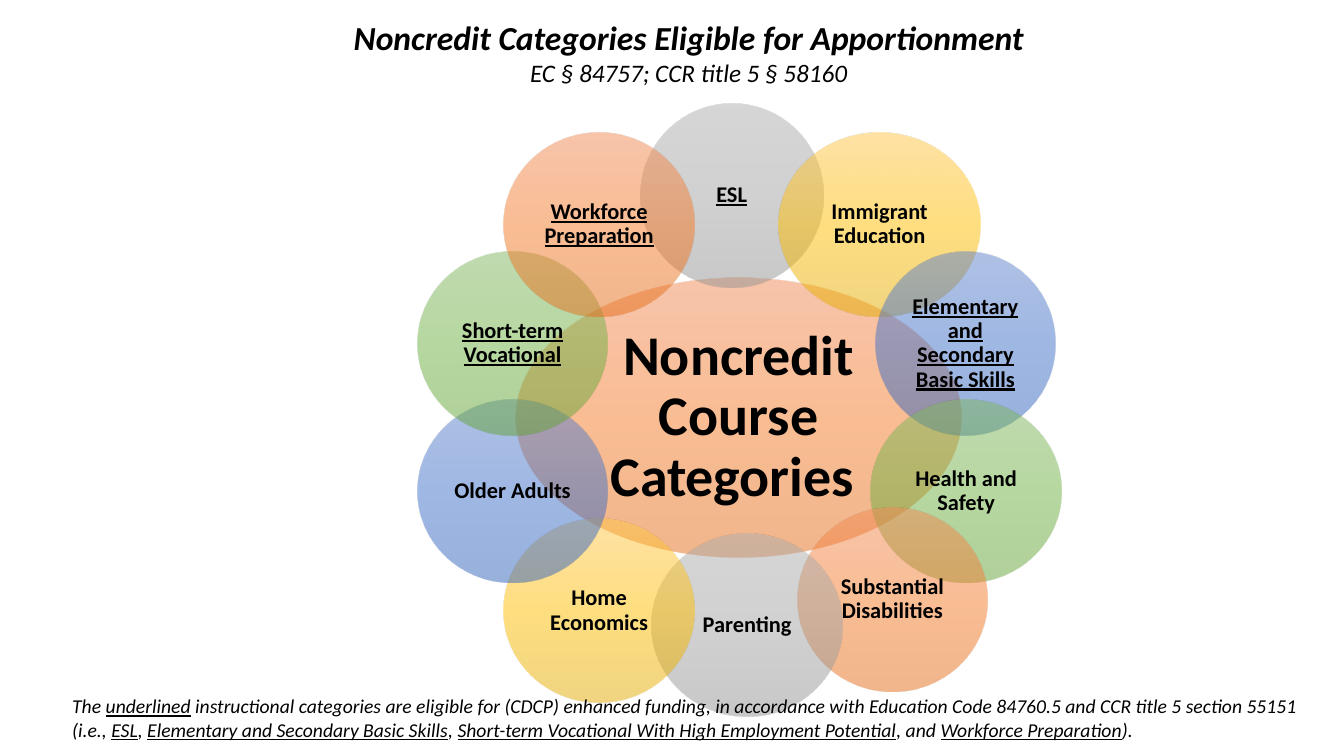
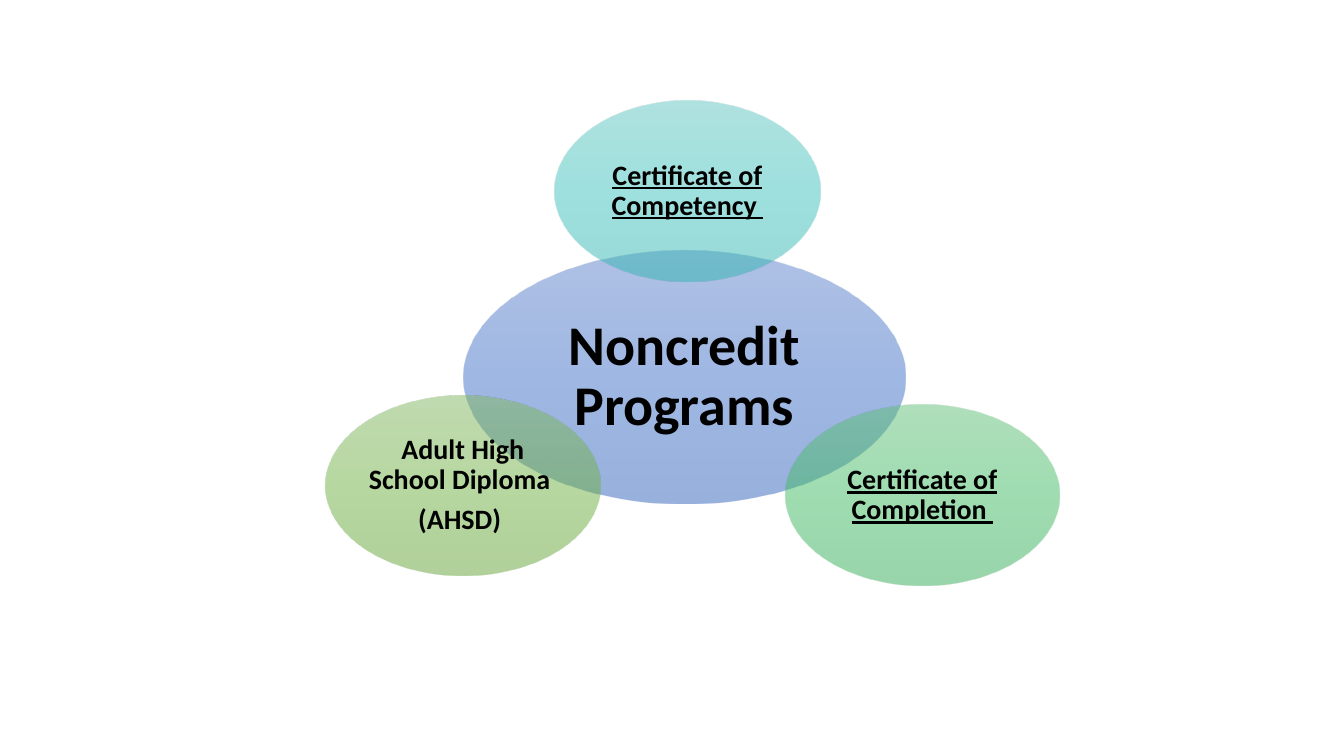
from lxml import etree
from pptx import Presentation
from pptx import util as u
from pptx.dml.color import RGBColor
from pptx.enum import shapes, text
from pptx.oxml.ns import qn

COLOURS = {
    "ink": "000000",
    "orange": ("F18C57", "F67B28", "E56C19"),
    "grey": ("AFAFAF", "A5A5A5", "939393"),
    "gold": ("FFC64B", "FFC000", "E3AB00"),
    "blue": ("6183CB", "3E70CA", "3062BB"),
    "green": ("81B861", "6FB242", "62A336"),
    "teal": ("60C6C1", "3DC4BF", "30B5B0"),
    "mint": ("60C077", "3FBC62", "33AC55"),
}
FONT = "Calibri"
CENTER = text.PP_ALIGN.CENTER


def write(paragraph, marked_text, size, bold=False, italic=False, align=CENTER, spacing=1.0, after=0):
    paragraph.alignment = align
    paragraph.line_spacing = spacing
    paragraph.space_after = u.Pt(after)
    for position, part in enumerate(marked_text.split("_")):
        if part:
            run = paragraph.add_run()
            run.text = part
            run.font.name = FONT
            run.font.size = u.Pt(size)
            run.font.bold = bold
            run.font.italic = italic
            run.font.underline = position % 2 == 1
            run.font.color.rgb = RGBColor.from_string(COLOURS["ink"])


def add_bubble(slide, lines, colour, left, top, width, height, size, inset):
    bubble = slide.shapes.add_shape(
        shapes.MSO_SHAPE.OVAL, u.Cm(left), u.Cm(top), u.Cm(width), u.Cm(height))
    bubble.shadow.inherit = False
    bubble.line.fill.background()
    bubble.fill.gradient()
    bubble.fill.gradient_angle = 270
    stops = next(bubble.element.iter(qn("a:gsLst")))
    for stop in list(stops):
        stops.remove(stop)
    for position, shade in zip((0, 50000, 100000), COLOURS[colour]):
        stop = etree.SubElement(stops, qn("a:gs"), pos=str(position))
        tint = etree.SubElement(stop, qn("a:srgbClr"), val=shade)
        etree.SubElement(tint, qn("a:alpha"), val="50000")
    frame = bubble.text_frame
    frame.word_wrap = True
    frame.vertical_anchor = text.MSO_ANCHOR.MIDDLE
    frame.margin_left = frame.margin_right = frame.margin_top = frame.margin_bottom = u.Cm(inset)
    for number, line in enumerate(lines):
        paragraph = frame.add_paragraph() if number else frame.paragraphs[0]
        write(paragraph, line, size, bold=True, spacing=0.9, after=size * 0.35)


deck = Presentation()
deck.slide_width, deck.slide_height = u.Cm(33.87), u.Cm(19.05)
title_only, blank = deck.slide_layouts[5], deck.slide_layouts[6]

categories = deck.slides.add_slide(title_only)
add_bubble(categories, ["Noncredit Course Categories "], "orange", 13, 6.99, 11.23, 7.06, 40, 0.15)
for label, colour, left, top, width in [
    ("_ESL_", "grey", 16.13, 2.62, 4.62),
    ("Immigrant Education", "gold", 19.63, 3.35, 5.08),
    ("_Elementary and Secondary Basic Skills_", "blue", 22.07, 6.35, 4.52),
    ("Health and Safety", "green", 21.95, 10.06, 4.8),
    ("Substantial Disabilities", "orange", 20.09, 12.8, 4.8),
    ("Parenting", "grey", 16.43, 13.44, 4.8),
    ("Home Economics", "gold", 12.7, 13.08, 4.8),
    ("Older Adults", "blue", 10.52, 10.06, 4.8),
    ("_Short-term Vocational_", "green", 10.52, 6.35, 4.8),
    ("_Workforce_ _Preparation_", "orange", 12.7, 3.35, 4.8),
]:
    add_bubble(categories, [label], colour, left, top, width, 4.62, 16, 0.05)

footnote = categories.shapes.add_textbox(u.Cm(1.57), u.Cm(17.37), u.Cm(31.55), u.Cm(1.45))
footnote.text_frame.word_wrap = True
write(
    footnote.text_frame.paragraphs[0],
    "The _underlined_ instructional categories are eligible for (CDCP) enhanced funding, "
    "in accordance with Education Code 84760.5 and CCR title 5 section 55151 (i.e., _ESL_, "
    "_Elementary and Secondary Basic Skills_, "
    "_Short-term Vocational With High Employment Potential_, and _Workforce Preparation_).",
    14, italic=True, align=text.PP_ALIGN.LEFT)

heading = categories.shapes.title
heading.left, heading.top, heading.width, heading.height = u.Cm(2.54), u.Cm(0.3), u.Cm(29.64), u.Cm(2.06)
heading.text_frame.vertical_anchor = text.MSO_ANCHOR.TOP
heading.text_frame.auto_size = text.MSO_AUTO_SIZE.NONE
write(heading.text_frame.paragraphs[0], "Noncredit Categories Eligible for Apportionment",
      24, bold=True, italic=True)
write(heading.text_frame.add_paragraph(), "EC § 84757; CCR title 5 § 58160", 18, italic=True)

programs = deck.slides.add_slide(blank)
add_bubble(programs, ["Noncredit Programs"], "blue", 11.68, 6.32, 11.13, 6.38, 40, 0.15)
for lines, colour, left, top, width in [
    (["_Certificate of Competency _"], "teal", 13.97, 2.54, 6.71),
    (["_Certificate of Completion _"], "mint", 19.79, 10.21, 6.91),
    (["Adult High School Diploma ", "(AHSD) "], "green", 8.2, 9.96, 6.93),
]:
    add_bubble(programs, lines, colour, left, top, width, 4.55, 20, 0.08)

deck.save("out.pptx")
